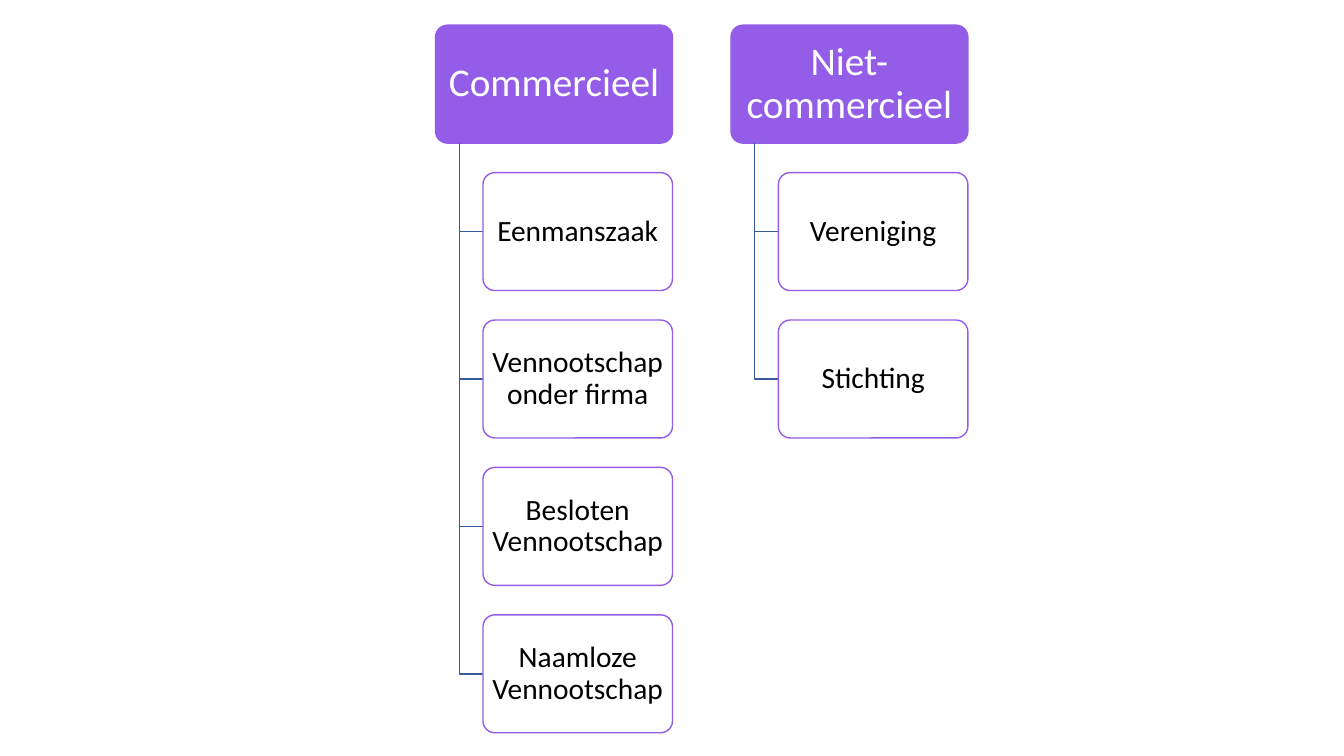
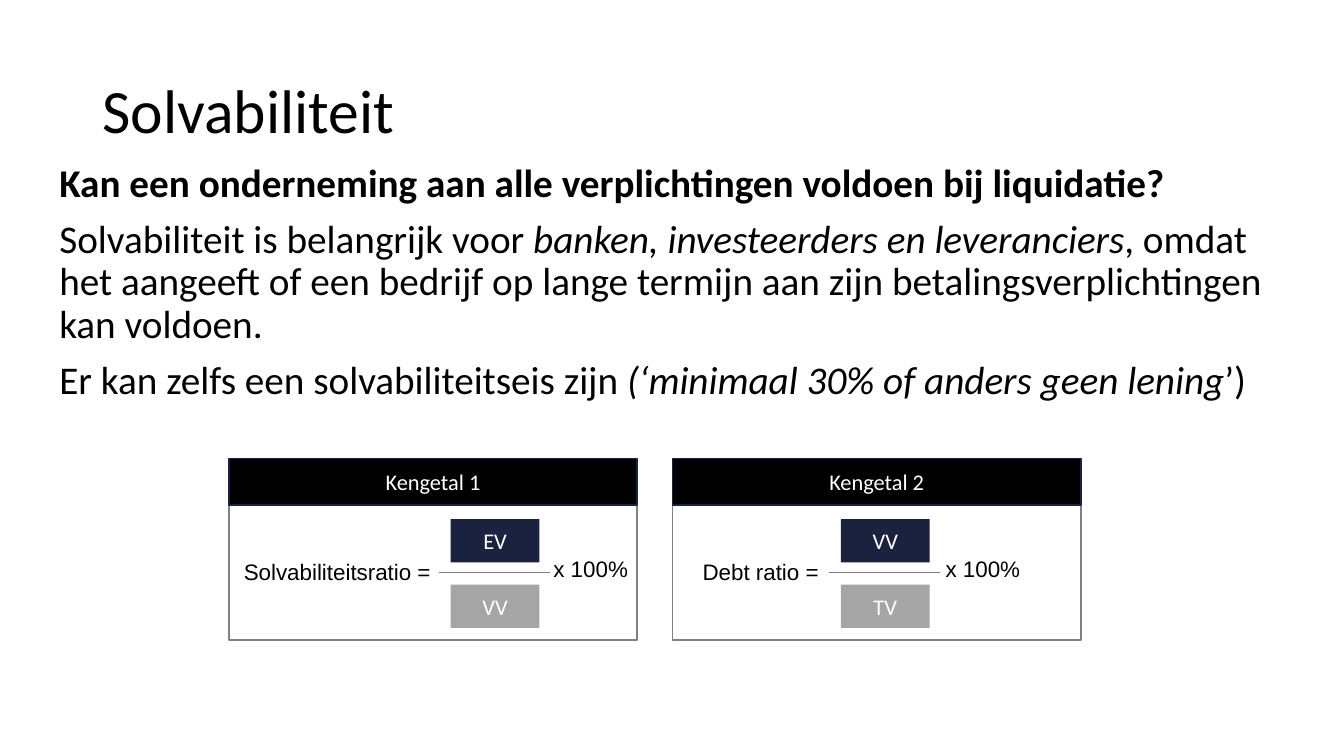
import pptx
import pptx.dml.color
import pptx.enum.shapes
import pptx.enum.text
import pptx.oxml.ns
import pptx.util
from lxml import etree

Inches = pptx.util.Inches
Pt = pptx.util.Pt
Kind = pptx.enum.shapes.MSO_SHAPE
Align = pptx.enum.text.PP_ALIGN
Anchor = pptx.enum.text.MSO_ANCHOR


class Painter:
    """Holds the deck's style and draws on the current slide."""

    colors = {"violet": "945DE8", "blue": "365B9D", "navy": "1B223F",
              "gray": "808080", "silver": "A5A5A5",
              "black": "000000", "white": "FFFFFF"}
    font = "Calibri"

    def __init__(self):
        self.deck = pptx.Presentation()
        self.deck.slide_width = Inches(13.33)
        self.deck.slide_height = Inches(7.5)
        self.page = None

    def new_page(self):
        self.page = self.deck.slides.add_slide(self.deck.slide_layouts[6])

    def color(self, name):
        return pptx.dml.color.RGBColor.from_string(self.colors[name])

    def paint(self, shape, fill=None, line=None):
        shape.shadow.inherit = False
        if fill:
            shape.fill.solid()
            shape.fill.fore_color.rgb = self.color(fill)
        else:
            shape.fill.background()
        if line:
            shape.line.color.rgb = self.color(line)
            shape.line.width = Pt(1)
        else:
            shape.line.fill.background()

    def fill_text(self, shape, paragraphs, size, color="black", font=None,
                  align=Align.LEFT, anchor=Anchor.TOP, spacing=1.0, before=0,
                  insets=(0.1, 0.05)):
        """Put text in a shape; a paragraph is a list of (text, style) runs."""
        frame = shape.text_frame
        frame.word_wrap = True
        frame.vertical_anchor = anchor
        frame.margin_left = frame.margin_right = Inches(insets[0])
        frame.margin_top = frame.margin_bottom = Inches(insets[1])
        for index, runs in enumerate(paragraphs):
            para = frame.add_paragraph() if index else frame.paragraphs[0]
            para.alignment = align
            para.line_spacing = spacing
            if index:
                para.space_before = Pt(before)
            for text, style in runs:
                span = para.add_run()
                span.text = text
                span.font.name = font or self.font
                span.font.size = Pt(size)
                span.font.bold = style == "bold"
                span.font.italic = style == "italic"
                span.font.color.rgb = self.color(color)

    def text(self, left, top, width, height, paragraphs, size, **style):
        box = self.page.shapes.add_textbox(
            Inches(left), Inches(top), Inches(width), Inches(height))
        self.fill_text(box, paragraphs, size, **style)

    def title(self, text):
        self.text(0.92, 0.4, 11.5, 1.45, [[(text, None)]], 44,
                  anchor=Anchor.MIDDLE, spacing=0.9)

    def box(self, left, top, width, height, fill=None, line=None, text=None,
            size=16, color="white", rounded=False, **style):
        kind = Kind.ROUNDED_RECTANGLE if rounded else Kind.RECTANGLE
        shape = self.page.shapes.add_shape(
            kind, Inches(left), Inches(top), Inches(width), Inches(height))
        if rounded:
            shape.adjustments[0] = 0.1
        self.paint(shape, fill, line)
        if text:
            self.fill_text(shape, [[(text, None)]], size, color=color,
                           align=Align.CENTER, anchor=Anchor.MIDDLE, **style)

    def elbow(self, left, top, right, bottom):
        """Draw an open line that goes down and then to the right."""
        builder = self.page.shapes.build_freeform(Inches(left), Inches(top))
        builder.add_line_segments(
            [(Inches(left), Inches(bottom)), (Inches(right), Inches(bottom))],
            close=False)
        self.paint(builder.convert_to_shape(), line="blue")

    def rule(self, left, top, width):
        line = self.page.shapes.add_connector(
            pptx.enum.shapes.MSO_CONNECTOR.STRAIGHT, Inches(left),
            Inches(top), Inches(left + width), Inches(top))
        line.line.color.rgb = self.color("gray")
        line.line.width = Pt(1)
        etree.SubElement(line._element.spPr, pptx.oxml.ns.qn("a:effectLst"))

    def tree(self, left, top, heading, items):
        """Draw a heading with its items hanging below it."""
        width, height = 2.35, 1.17
        pitch = height * 1.25
        trunk, branch = left + width / 10, left + width / 5
        self.box(left, top, width, height, "violet", "violet", heading, 28,
                 rounded=True, spacing=0.9, insets=(0.06, 0.04))
        for row, item in enumerate(items, 1):
            item_top = top + row * pitch
            self.elbow(trunk, top + height, branch, item_top + height / 2)
            self.box(branch, item_top, width * 0.8, height, "white", "violet",
                     item, 21, "black", rounded=True, spacing=0.9,
                     insets=(0.04, 0.03))

    def ratio_panel(self, left, heading, label, label_left, upper, lower,
                    fraction_left, factor_left):
        """Draw a headed frame with a formula; inner lefts are offsets."""
        width = 4.05
        self.box(left, 5.01, width, 1.34, line="gray")
        self.box(left, 4.55, width, 0.46, "black", "navy", heading)
        self.text(left + label_left, 5.49, 2.14, 0.37, [[(label, None)]], 16,
                  font="Arial")
        fraction = left + fraction_left
        self.box(fraction, 5.15, 0.88, 0.43, "navy", text=upper)
        self.rule(fraction - 0.12, 5.68, 1.1)
        self.box(fraction, 5.8, 0.88, 0.43, "silver", text=lower)
        self.text(left + factor_left, 5.46, 1.02, 0.37, [[("x 100%", None)]],
                  16, font="Arial")


def legal_forms(painter):
    painter.new_page()
    painter.tree(4.32, 0.25, "Commercieel", [
        "Eenmanszaak", "Vennootschap onder firma",
        "Besloten Vennootschap", "Naamloze Vennootschap"])
    painter.tree(7.25, 0.25, "Niet-commercieel", ["Vereniging", "Stichting"])


def solvency(painter):
    painter.new_page()
    painter.title("Solvabiliteit")
    painter.text(0.49, 1.57, 12.55, 2.7, [
        [("Kan een onderneming aan alle verplichtingen voldoen bij "
          "liquidatie?", "bold")],
        [("Solvabiliteit is belangrijk voor ", None),
         ("banken, investeerders en leveranciers", "italic"),
         (", omdat het aangeeft of een bedrijf op lange termijn aan zijn "
          "betalingsverplichtingen kan voldoen.", None)],
        [("Er kan zelfs een solvabiliteitseis zijn ", None),
         ("(‘minimaal 30% of anders geen lening", "italic"),
         ("’)", None)],
    ], 28, spacing=0.9, before=10)
    painter.ratio_panel(2.27, "Kengetal 1", "Solvabiliteitsratio =", 0.05,
                        "EV", "VV", 2.2, 3.12)
    painter.ratio_panel(6.67, "Kengetal 2", "Debt ratio =", 0.2,
                        "VV", "TV", 1.67, 2.61)


def main():
    painter = Painter()
    legal_forms(painter)
    solvency(painter)
    painter.deck.save("out.pptx")


if __name__ == "__main__":
    main()
